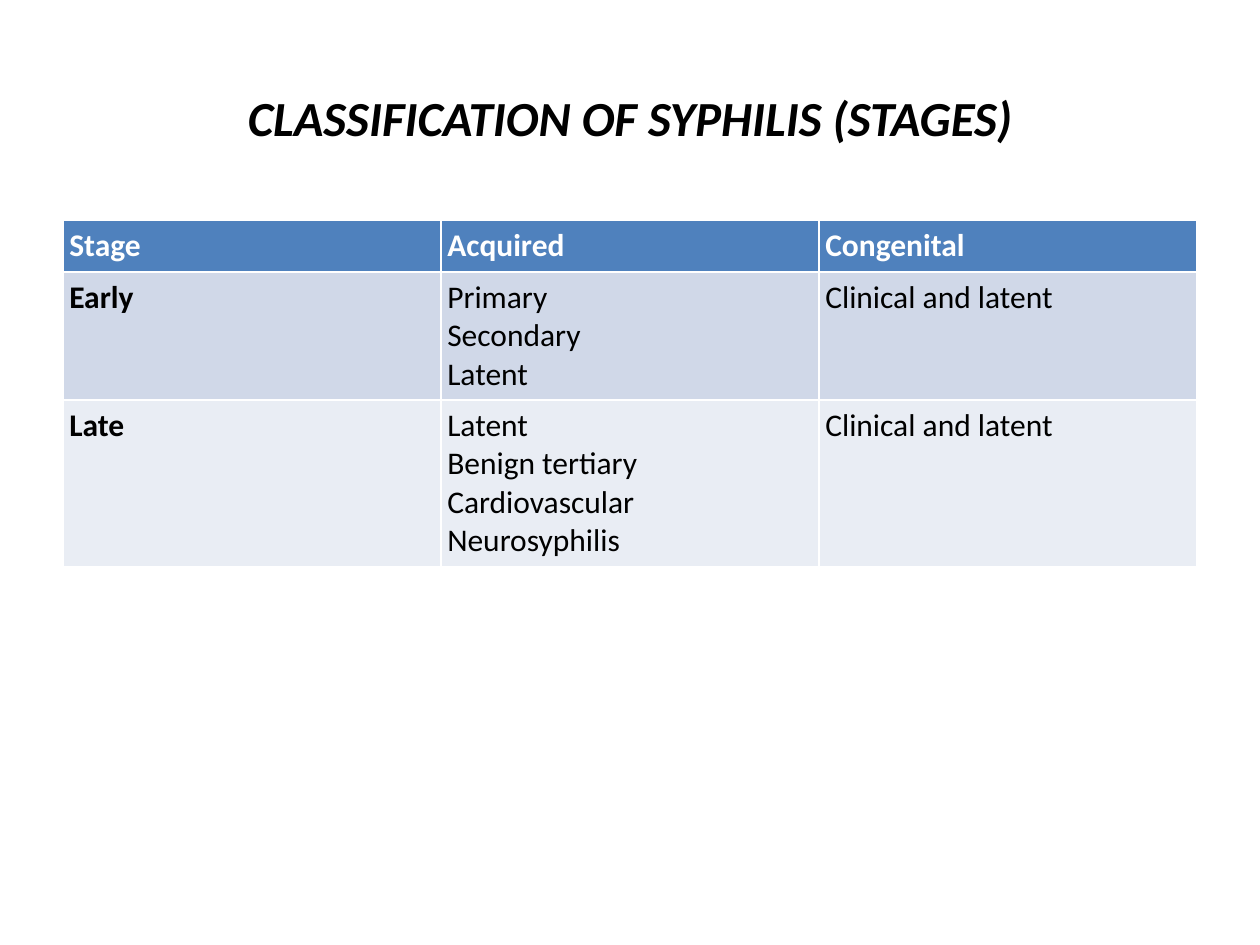
import pptx
import pptx.dml.color
import pptx.enum.text
import pptx.util
from pptx.util import Inches

BLACK = pptx.dml.color.RGBColor(0x00, 0x00, 0x00)
WHITE = pptx.dml.color.RGBColor(0xFF, 0xFF, 0xFF)
HEADER_BLUE = pptx.dml.color.RGBColor(0x4F, 0x81, 0xBD)
EARLY_BLUE = pptx.dml.color.RGBColor(0xD0, 0xD8, 0xE8)
LATE_BLUE = pptx.dml.color.RGBColor(0xE9, 0xED, 0xF4)

# "\v" is a line break inside a paragraph.
STAGES = [
    ["Stage", "Acquired", "Congenital"],
    ["Early", "Primary\vSecondary\vLatent", "Clinical and latent"],
    ["Late", "Latent\vBenign tertiary\vCardiovascular\vNeurosyphilis", "Clinical and latent"],
]
ROW_FILLS = [HEADER_BLUE, EARLY_BLUE, LATE_BLUE]


def format_runs(text_frame, size, color, bold, italic=None):
    for paragraph in text_frame.paragraphs:
        for run in paragraph.runs:
            run.font.name = "Calibri"
            run.font.size = pptx.util.Pt(size)
            run.font.color.rgb = color
            run.font.bold = bold
            run.font.italic = italic


presentation = pptx.Presentation()
presentation.slide_width = Inches(10)
presentation.slide_height = Inches(7.5)
slide = presentation.slides.add_slide(presentation.slide_layouts[5])

title = slide.shapes.title
title.left, title.top = Inches(0.5), Inches(0.3)
title.width, title.height = Inches(9), Inches(1.25)
title.text_frame.text = "CLASSIFICATION OF SYPHILIS (STAGES)"
title.text_frame.vertical_anchor = pptx.enum.text.MSO_ANCHOR.MIDDLE
title.text_frame.paragraphs[0].alignment = pptx.enum.text.PP_ALIGN.CENTER
format_runs(title.text_frame, 28, BLACK, bold=True, italic=True)

# The default table style draws the white borders.
table_frame = slide.shapes.add_table(
    len(STAGES), len(STAGES[0]), Inches(0.5), Inches(1.75), Inches(9), Inches(2.71)
)
table = table_frame.table
for row_index, texts in enumerate(STAGES):
    table.rows[row_index].height = Inches(0.41)
    for column_index, text in enumerate(texts):
        cell = table.cell(row_index, column_index)
        cell.margin_left = cell.margin_right = Inches(0.05)
        cell.margin_top = cell.margin_bottom = Inches(0.05)
        cell.fill.solid()
        cell.fill.fore_color.rgb = ROW_FILLS[row_index]
        cell.text_frame.text = text
        is_header = row_index == 0
        format_runs(
            cell.text_frame,
            18,
            WHITE if is_header else BLACK,
            bold=is_header or column_index == 0,
        )
# Rows grow to fit their text; the frame keeps the full height.
table_frame.height = Inches(2.71)

presentation.save("out.pptx")
